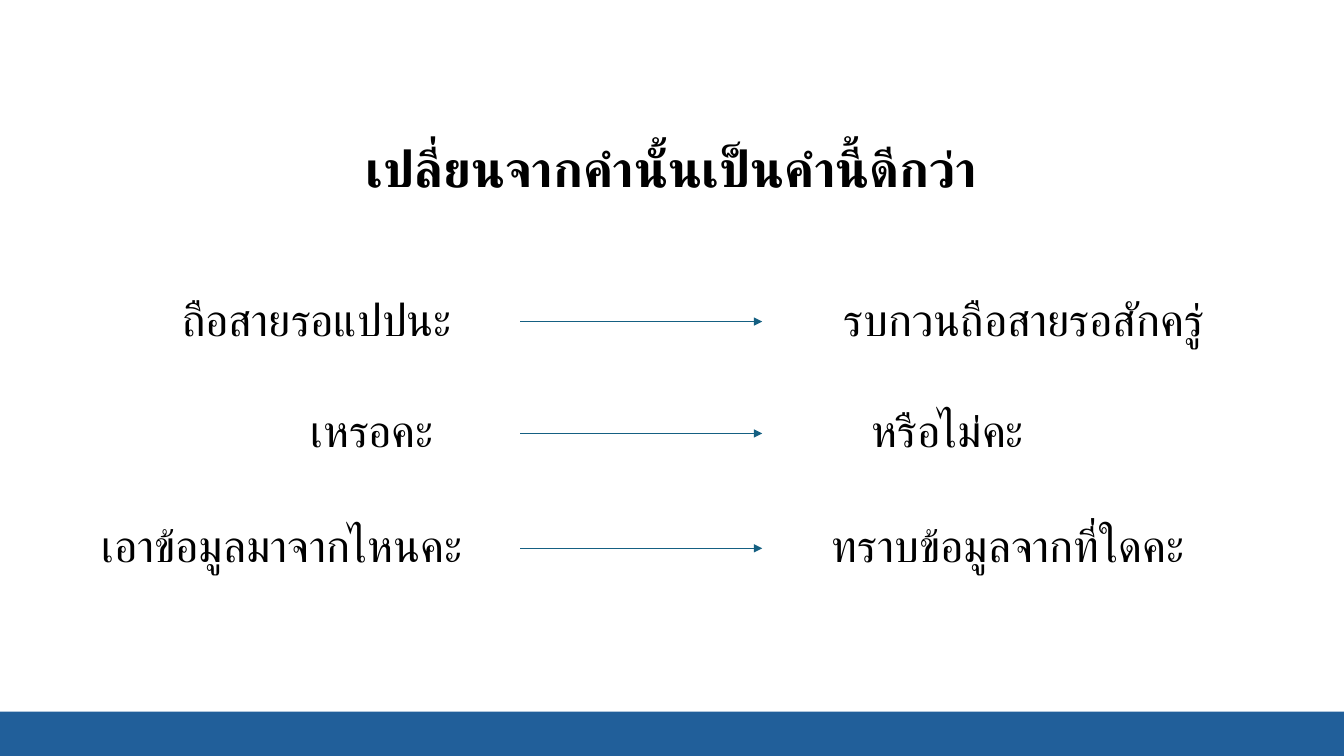
from lxml import etree
from pptx import Presentation
from pptx.dml.color import RGBColor
from pptx.enum.shapes import MSO_CONNECTOR, MSO_SHAPE
from pptx.enum.text import MSO_ANCHOR, MSO_AUTO_SIZE, PP_ALIGN
from pptx.oxml.ns import qn
from pptx.util import Inches, Pt

BLACK = RGBColor(0x00, 0x00, 0x00)
ARROW_BLUE = RGBColor(0x15, 0x60, 0x82)
BAR_BLUE = RGBColor(0x21, 0x5F, 0x9A)
FONT = "Calibri"


def write_phrase(shape, phrase, size, bold=False):
    frame = shape.text_frame
    layout = {
        "word_wrap": True,
        "auto_size": MSO_AUTO_SIZE.SHAPE_TO_FIT_TEXT,
        "vertical_anchor": MSO_ANCHOR.TOP,
    }
    for name, value in layout.items():
        setattr(frame, name, value)
    paragraph = frame.paragraphs[0]
    paragraph.alignment = PP_ALIGN.CENTER
    run = paragraph.add_run()
    run.text = phrase
    for name, value in {"name": FONT, "size": Pt(size), "bold": bold}.items():
        setattr(run.font, name, value)
    run.font.color.rgb = BLACK
    # Thai letters take the complex-script font
    etree.SubElement(run.font._element, qn("a:cs"), typeface=FONT)


prs = Presentation()
prs.slide_width, prs.slide_height = Inches(13.33), Inches(7.5)
slide = prs.slides.add_slide(prs.slide_layouts[5])

# Title
title = slide.shapes.title
title.left, title.top = Inches(2.96), Inches(1.31)
title.width, title.height = Inches(7.4), Inches(0.71)
write_phrase(title, "เปลี่ยนจากคำนั้นเป็นคำนี้ดีกว่า", 36, bold=True)

# Casual phrase, its box width, polite phrase, its box width, row top
rows = [
    ("ถือสายรอแปปนะ", 3.61, "รบกวนถือสายรอสักครู่", 4.61, 2.84),
    ("เหรอคะ", 2.52, "หรือไม่คะ", 3.1, 3.95),
    ("เอาข้อมูลมาจากไหนคะ", 4.3, "ทราบข้อมูลจากที่ใดคะ", 4.3, 5.09),
]
CASUAL_RIGHT, POLITE_LEFT = 4.95, 7.85
ARROW_START, ARROW_END, ARROW_DROP = 5.16, 7.56, 0.35

for casual, casual_width, polite, polite_width, top in rows:
    for phrase, left, width in (
        (casual, CASUAL_RIGHT - casual_width, casual_width),
        (polite, POLITE_LEFT, polite_width),
    ):
        phrase_box = slide.shapes.add_textbox(
            Inches(left), Inches(top), Inches(width), Inches(0.64))
        write_phrase(phrase_box, phrase, 32)

    # Arrow from casual to polite
    arrow_y = Inches(top + ARROW_DROP)
    arrow = slide.shapes.add_connector(
        MSO_CONNECTOR.STRAIGHT,
        Inches(ARROW_START), arrow_y, Inches(ARROW_END), arrow_y)
    arrow.line.color.rgb = ARROW_BLUE
    arrow.line.width = Pt(1)
    etree.SubElement(arrow.line._get_or_add_ln(), qn("a:tailEnd"), type="triangle")
    etree.SubElement(arrow._element.spPr, qn("a:effectLst"))

# Bottom bar
bottom_bar = slide.shapes.add_shape(
    MSO_SHAPE.RECTANGLE, 0, Inches(7.06), prs.slide_width, Inches(0.44))
bottom_bar.shadow.inherit = False
bottom_bar.fill.solid()
bottom_bar.fill.fore_color.rgb = BAR_BLUE
bottom_bar.line.fill.background()

prs.save("out.pptx")
